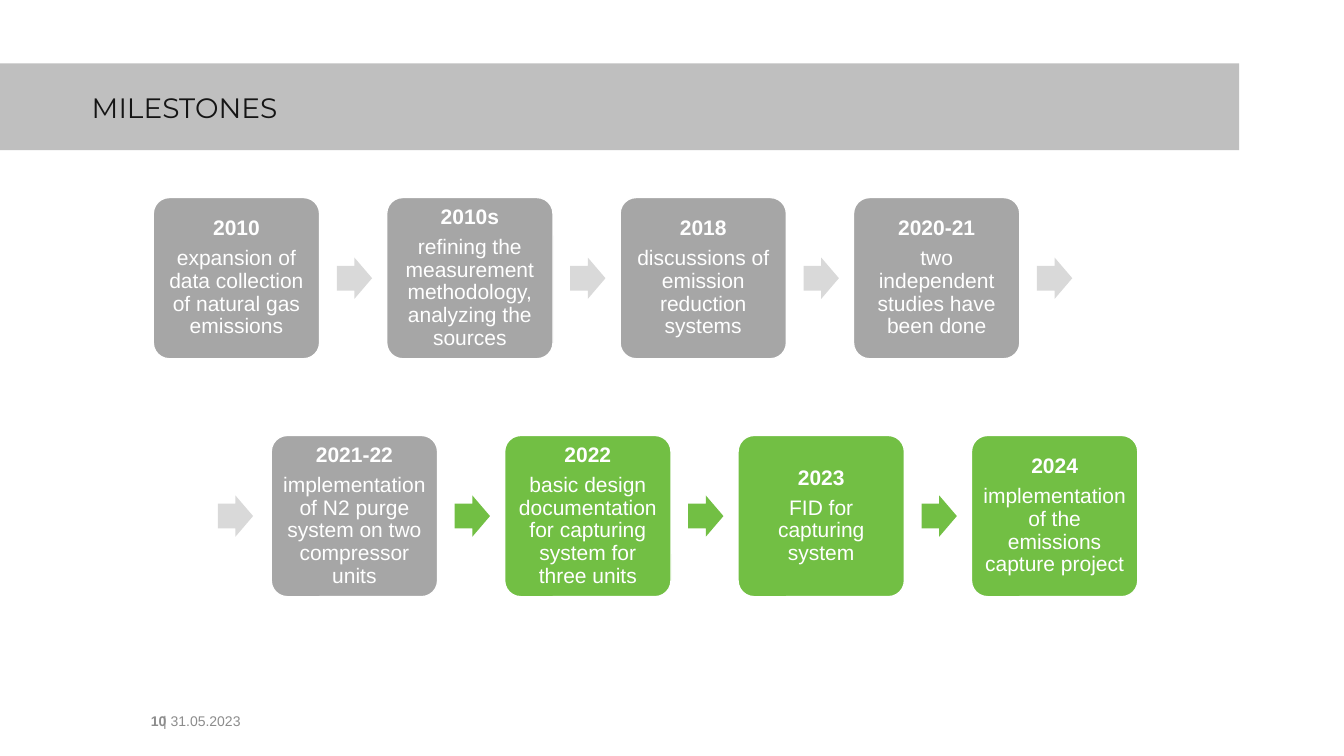
from pptx import Presentation
from pptx.dml.color import RGBColor
from pptx.enum.shapes import MSO_SHAPE
from pptx.enum.text import MSO_ANCHOR, MSO_AUTO_SIZE, PP_ALIGN
from pptx.util import Inches, Pt

CARD, ARROW = MSO_SHAPE.ROUNDED_RECTANGLE, MSO_SHAPE.RIGHT_ARROW
LEFT, CENTER, RIGHT = PP_ALIGN.LEFT, PP_ALIGN.CENTER, PP_ALIGN.RIGHT
TOP, MIDDLE = MSO_ANCHOR.TOP, MSO_ANCHOR.MIDDLE
NO_AUTOFIT = MSO_AUTO_SIZE.NONE

# Colours
WHITE, INK, MUTED = "FFFFFF", "151515", "8C8C8C"
BAND, PAST, PAST_ARROW, PLANNED = "BFBFBF", "A6A6A6", "D9D9D9", "72BF44"

# Timeline grid, in inches
PITCH = 2.315
CARD_W, CARD_H = 1.65, 1.6
ARROW_W, ARROW_H = 0.35, 0.41
ARROW_OFFSET = 1.82
FIRST_ROW = (1.52, 1.96)
SECOND_ROW = (2.69, 4.32)

# Year, event, card colour, colour of the arrow that follows (None: no arrow)
EARLIER = [
    ("2010", "expansion of data collection of natural gas emissions", PAST, PAST_ARROW),
    ("2010s", "refining the measurement methodology, analyzing the sources", PAST, PAST_ARROW),
    ("2018", "discussions of emission reduction systems", PAST, PAST_ARROW),
    ("2020-21", "two independent studies have been done", PAST, PAST_ARROW),
]
LATER = [
    ("2021-22", "implementation of N2 purge system on two compressor units", PAST, PLANNED),
    ("2022", "basic design documentation for capturing system for three units", PLANNED, PLANNED),
    ("2023", "FID for capturing system", PLANNED, PLANNED),
    ("2024", "implementation of the emissions capture project", PLANNED, None),
]


def rgb(hex_code):
    return RGBColor.from_string(hex_code)


def paint(shape, hex_code):
    shape.fill.solid()
    shape.fill.fore_color.rgb = rgb(hex_code)


def set_frame(frame, margins, anchor):
    frame.word_wrap = True
    frame.auto_size = NO_AUTOFIT
    frame.vertical_anchor = anchor
    (frame.margin_left, frame.margin_top,
     frame.margin_right, frame.margin_bottom) = [Inches(m) for m in margins]


def style(paragraph, size, color, align, font="Arial", bold=False):
    paragraph.alignment = align
    paragraph.font.size = Pt(size)
    paragraph.font.name = font
    paragraph.font.bold = bold
    paragraph.font.color.rgb = rgb(color)


def add_preset(slide, preset, x, y, width, height, color):
    shape = slide.shapes.add_shape(
        preset, Inches(x), Inches(y), Inches(width), Inches(height))
    shape.shadow.inherit = False
    paint(shape, color)
    shape.line.fill.background()
    return shape


def add_arrow(slide, x, row_top, color):
    y = row_top + (CARD_H - ARROW_H) / 2
    arrow = add_preset(slide, ARROW, x, y, ARROW_W, ARROW_H, color)
    arrow.adjustments[0] = 0.6
    arrow.adjustments[1] = 0.5


def add_milestone(slide, x, y, year, event, color):
    card = add_preset(slide, CARD, x, y, CARD_W, CARD_H, color)
    card.adjustments[0] = 0.1
    card.line.color.rgb = rgb(WHITE)
    card.line.width = Pt(1)
    frame = card.text_frame
    set_frame(frame, [0.06] * 4, MIDDLE)
    frame.text = f"{year}\n{event}"
    for index, paragraph in enumerate(frame.paragraphs):
        style(paragraph, 15, WHITE, CENTER, bold=index == 0)
        paragraph.line_spacing = 0.9
        paragraph.space_after = Pt(5.25)


def add_row(slide, origin, milestones):
    left, top = origin
    for column, (year, event, color, arrow_color) in enumerate(milestones):
        x = left + column * PITCH
        add_milestone(slide, x, top, year, event, color)
        if arrow_color:
            add_arrow(slide, x + ARROW_OFFSET, top, arrow_color)


def add_footer(slide, x, width, text, align, bold=False):
    box = slide.shapes.add_textbox(
        Inches(x), Inches(6.95), Inches(width), Inches(0.4))
    set_frame(box.text_frame, (0.1, 0.05, 0.1, 0.05), MIDDLE)
    box.text_frame.text = text
    style(box.text_frame.paragraphs[0], 10, MUTED, align, bold=bold)


def set_title(slide, text):
    title = slide.shapes.title
    title.left, title.top = Inches(0), Inches(0.63)
    title.width, title.height = Inches(12.29), Inches(0.86)
    paint(title, BAND)
    title.text_frame.text = text
    set_frame(title.text_frame, (0.91, 0.31, 0.1, 0.24), TOP)
    heading = title.text_frame.paragraphs[0]
    style(heading, 20, INK, LEFT, font="Montserrat")
    heading.line_spacing = 0.9


def main():
    deck = Presentation()
    deck.slide_width, deck.slide_height = Inches(13.33), Inches(7.5)
    slide = deck.slides.add_slide(deck.slide_layouts[5])

    # Title band
    set_title(slide, "MILESTONES")

    # Timeline, with an arrow leading into the second row
    add_row(slide, FIRST_ROW, EARLIER)
    add_arrow(slide, 2.16, SECOND_ROW[1], PAST_ARROW)
    add_row(slide, SECOND_ROW, LATER)

    # Page number and date
    add_footer(slide, 1.52, 3, "| 31.05.2023", LEFT)
    add_footer(slide, 1.08, 0.67, "10", RIGHT, bold=True)

    deck.save("out.pptx")


if __name__ == "__main__":
    main()
